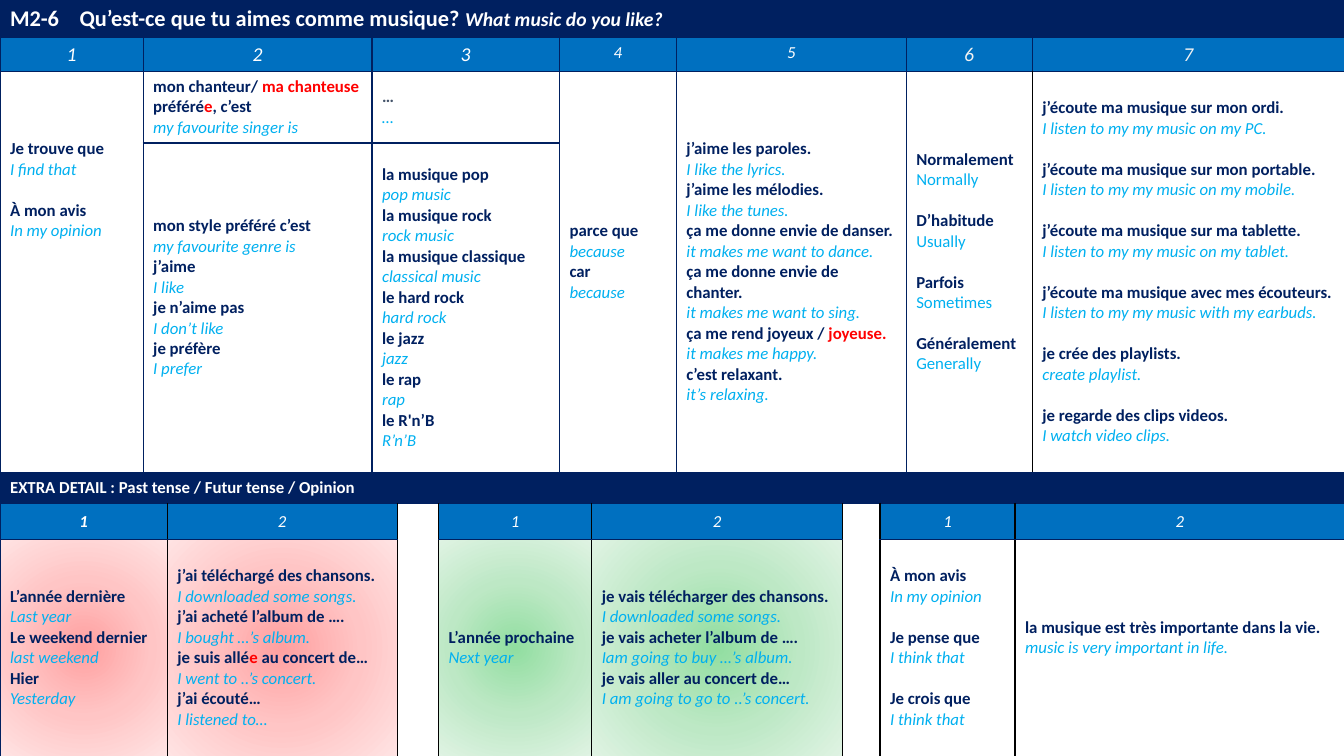
from lxml.etree import SubElement
from pptx import Presentation
from pptx.dml.color import RGBColor
from pptx.enum.text import MSO_ANCHOR as Anchor, PP_ALIGN as Align
from pptx.oxml import parse_xml
from pptx.oxml.ns import nsdecls, qn
from pptx.util import Inches, Pt

NAVY = RGBColor(0x00, 0x20, 0x60)
BLUE = RGBColor(0x00, 0x70, 0xC0)
SKY = RGBColor(0x00, 0xB0, 0xF0)
RED = RGBColor(0xFF, 0x00, 0x00)
SLATE = RGBColor(0x44, 0x54, 0x6A)
WHITE = RGBColor(0xFF, 0xFF, 0xFF)
PALE = RGBColor(0xF2, 0xF2, 0xF2)
BLACK = RGBColor(0x00, 0x00, 0x00)
PINK_GLOW = [RGBColor(0xFF, 0xA0, 0xA0), RGBColor(0xFF, 0xC5, 0xC5), RGBColor(0xFF, 0xE3, 0xE3)]
GREEN_GLOW = [RGBColor(0x91, 0xDE, 0xA0), RGBColor(0xBD, 0xE8, 0xC5), RGBColor(0xDF, 0xF3, 0xE3)]

COLUMNS = [1.42, 0.21, 2.03, 0.25, 0.41, 1.2, 0.32, 0.84, 1.65, 0.37, 0.26, 1.08, 0.17, 1.21, 1.89]
ROWS = [0.36, 0.33, 0.69, 3.27, 0.3, 0.36, 2.15]
LINE = Pt(14.65)

TOP_HEADS = [(0, 1, 14, WHITE), (1, 2, 14, WHITE), (3, 3, 14, WHITE), (6, 2, 12, WHITE),
             (8, 3, 12, WHITE), (11, 2, 14, PALE), (13, 2, 14, PALE)]
EXTRA_HEADS = [(0, 2, "1"), (2, 2, "2"), (5, 2, "1"), (7, 2, "2"), (10, 2, "1"), (12, 3, "2")]

PHRASES = [
    (2, 0, 2, 1, dict(spaced=True, lift=8), [
        "Je trouve que", "I find that", "À mon avis", "In my opinion"]),
    (2, 1, 1, 2, {}, [
        "mon chanteur/ [ma chanteuse ]préféré[e], c’est", "my favourite singer is"]),
    (2, 3, 1, 3, dict(color=SLATE), ["…", "…"]),
    (2, 6, 2, 2, dict(lift=1), ["parce que", "because", "car", "because"]),
    (2, 8, 2, 3, {}, [
        "j’aime les paroles.", "I like the lyrics.",
        "j’aime les mélodies.", "I like the tunes.",
        "ça me donne envie de danser.", "it makes me want to dance.",
        "ça me donne envie de chanter.", "it makes me want to sing.",
        "ça me rend joyeux / [joyeuse.]", "it makes me happy.",
        "c’est relaxant.", "it’s relaxing."]),
    (2, 11, 2, 2, dict(spaced=True, lift=1, italic=False), [
        "Normalement", "Normally", "D’habitude", "Usually",
        "Parfois", "Sometimes", "Généralement", "Generally"]),
    (2, 13, 2, 2, dict(spaced=True), [
        "j’écoute ma musique sur mon ordi.", "I listen to my my music on my PC.",
        "j’écoute ma musique sur mon portable.", "I listen to my my music on my mobile.",
        "j’écoute ma musique sur ma tablette.", "I listen to my my music on my tablet.",
        "j’écoute ma musique avec mes écouteurs.", "I listen to my my music with my earbuds.",
        "je crée des playlists.", "create playlist.",
        "je regarde des clips videos.", "I watch video clips."]),
    (3, 1, 1, 2, dict(lift=1), [
        "mon style préféré c’est", "my favourite genre is", "j’aime", "I like",
        "je n’aime pas", "I don’t like", "je préfère", "I prefer"]),
    (3, 3, 1, 3, {}, [
        "la musique pop", "pop music", "la musique rock", "rock music",
        "la musique classique", "classical music", "le hard rock", "hard rock",
        "le jazz", "jazz", "le rap", "rap", "le R'n’B", "R’n’B"]),
    (6, 0, 1, 2, dict(fill=PINK_GLOW), [
        "L’année dernière", "Last year", "Le weekend dernier", "last weekend",
        "Hier", "Yesterday"]),
    (6, 2, 1, 2, dict(fill=PINK_GLOW), [
        "j’ai téléchargé des chansons.", "I downloaded some songs.",
        "j’ai acheté l’album de ….", "I bought …’s album.",
        "je suis allé[e ]au concert de…", "I went to ..’s concert.",
        "j’ai écouté…", "I listened to…"]),
    (6, 5, 1, 2, dict(fill=GREEN_GLOW), ["L’année prochaine", "Next year"]),
    (6, 7, 1, 2, dict(fill=GREEN_GLOW), [
        "je vais télécharger des chansons.", "I downloaded some songs.",
        "je vais acheter l’album de ….", "Iam going to buy …’s album.",
        "je vais aller au concert de…", "I am going to go to ..’s concert."]),
    (6, 10, 1, 2, dict(spaced=True), [
        "À mon avis", "In my opinion", "Je pense que", "I think that",
        "Je crois que", "I think that"]),
    (6, 12, 1, 3, dict(lift=1), [
        "la musique est très importante dans la vie.", "music is very important in life."]),
]


def add_text(para, text, size=12, color=NAVY, bold=False, italic=False):
    span = para.add_run()
    span.text = text
    font = span.font
    font.name, font.size, font.bold, font.italic = "Calibri", Pt(size), bold, italic
    font.color.rgb = color


class PhraseGrid:
    """Draws a vocabulary grid as one table on the current page."""

    def __init__(self, page):
        frame = page.shapes.add_table(len(ROWS), len(COLUMNS), 0, 0,
                                      Inches(sum(COLUMNS)), Inches(sum(ROWS)))
        self.table = frame.table
        self.table.first_row = self.table.horz_banding = False
        for column, width in zip(self.table.columns, COLUMNS):
            column.width = Inches(width)
        for row, height in zip(self.table.rows, ROWS):
            row.height = Inches(height)

    def paint(self, cell, fill):
        if fill is None:
            cell.fill.background()
        elif isinstance(fill, list):
            stops = "".join(f'<a:gs pos="{spot * 50000}"><a:srgbClr val="{color}"/></a:gs>'
                            for spot, color in enumerate(fill))
            cell._tc.get_or_add_tcPr().append(parse_xml(
                f'<a:gradFill {nsdecls("a")}><a:gsLst>{stops}</a:gsLst><a:path path="circle">'
                '<a:fillToRect l="50000" t="50000" r="50000" b="50000"/></a:path></a:gradFill>'))
        else:
            cell.fill.solid()
            cell.fill.fore_color.rgb = fill

    def border(self, cell, sides):
        lines = [parse_xml(f'<a:{side} {nsdecls("a")} w="12700"><a:solidFill>'
                           f'<a:srgbClr val="{color}"/></a:solidFill></a:{side}>')
                 for side, color in sides]
        for place, line in enumerate(lines):
            cell._tc.get_or_add_tcPr().insert(place, line)

    def cell(self, row, col, down=1, across=1, fill=None, anchor=Anchor.MIDDLE):
        last_row, last_col = row + down - 1, col + across - 1
        dark = row >= 4 or (row == 2 and col >= 11)
        left = BLACK if dark and col not in (0, 11) else NAVY
        right = BLACK if dark else NAVY
        for r in range(row, last_row + 1):
            for c in range(col, last_col + 1):
                cell = self.table.cell(r, c)
                self.paint(cell, fill)
                edges = [("lnL", left, c == col), ("lnR", right, c == last_col),
                         ("lnT", NAVY, r == row), ("lnB", NAVY, r == last_row)]
                self.border(cell, [(side, color) for side, color, outer in edges if outer])
                cell.text_frame.paragraphs[0]._p.get_or_add_endParaRPr().set("sz", "1200")
        origin = self.table.cell(row, col)
        if down * across > 1:
            origin.merge(self.table.cell(last_row, last_col))
        origin.vertical_anchor = anchor
        return origin

    def heading(self, row, col, across, text, size=12, color=WHITE, bold=False, anchor=Anchor.MIDDLE):
        para = self.cell(row, col, 1, across, BLUE, anchor).text_frame.paragraphs[0]
        para.alignment = Align.CENTER
        add_text(para, text, size=size, color=color, bold=bold, italic=True)

    def title(self, label, question, translation):
        para = self.cell(0, 0, 1, 14, NAVY, Anchor.TOP).text_frame.paragraphs[0]
        tabs = SubElement(para._p.get_or_add_pPr(), qn("a:tabLst"))
        SubElement(tabs, qn("a:tab"), pos=str(Inches(0.69)), algn="l")
        add_text(para, f"{label}\t{question} ", size=16, color=WHITE, bold=True)
        add_text(para, translation, size=14, color=WHITE, bold=True, italic=True)
        self.cell(0, 14, fill=NAVY)

    def phrases(self, row, col, down, across, lines, fill=None, color=NAVY,
                italic=True, spaced=False, lift=0):
        cell = self.cell(row, col, down, across, fill)
        cell.margin_bottom = Inches(0.05) + lift * LINE
        frame = cell.text_frame
        for index, line in enumerate(lines):
            para = frame.paragraphs[0] if index == 0 else frame.add_paragraph()
            if index % 2:
                add_text(para, line, color=SKY, italic=italic)
                continue
            if spaced and index:
                para.space_before = LINE
            for place, part in enumerate(line.replace("]", "[").split("[")):
                if part:
                    add_text(para, part, color=RED if place % 2 else color, bold=True)


def main():
    deck = Presentation()
    deck.slide_width, deck.slide_height = Inches(13.33), Inches(7.5)
    grid = PhraseGrid(deck.slides.add_slide(deck.slide_layouts[6]))
    grid.title("M2-6", "Qu’est-ce que tu aimes comme musique?", "What music do you like?")
    for number, (col, across, size, color) in enumerate(TOP_HEADS, 1):
        grid.heading(1, col, across, str(number), size=size, color=color, anchor=Anchor.TOP)
    banner = grid.cell(4, 0, 1, len(COLUMNS), NAVY)
    add_text(banner.text_frame.paragraphs[0], "EXTRA DETAIL : Past tense / Futur tense / Opinion",
             color=WHITE, bold=True)
    for col, across, text in EXTRA_HEADS:
        grid.heading(5, col, across, text, bold=col == 0)
    for col in (4, 9):
        grid.cell(5, col, down=2, fill=WHITE)
    for row, col, down, across, style, lines in PHRASES:
        grid.phrases(row, col, down, across, lines, **style)
    deck.save("out.pptx")


if __name__ == "__main__":
    main()
